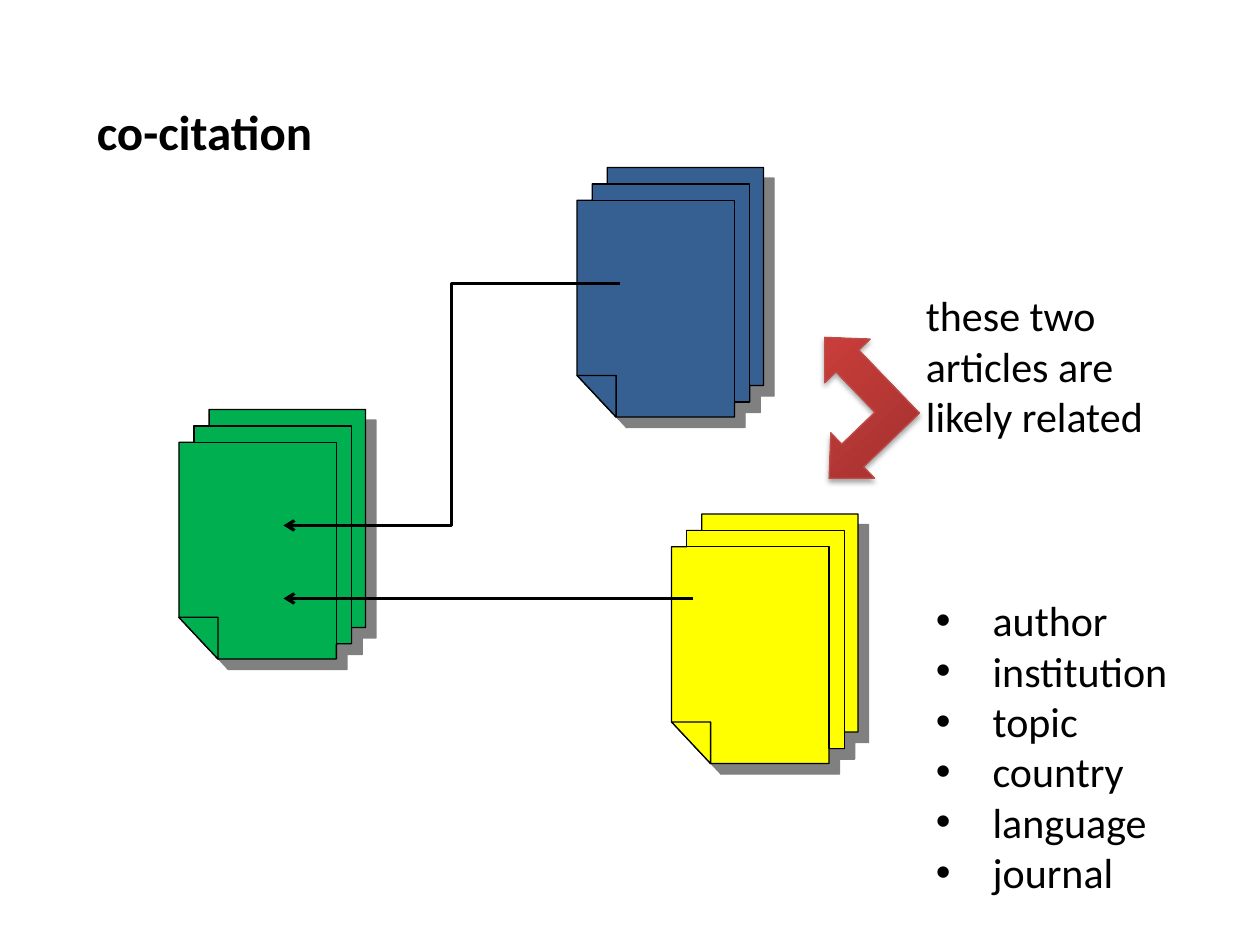
import lxml.etree
import pptx
import pptx.dml.color
import pptx.enum.shapes
import pptx.enum.text
import pptx.oxml
import pptx.oxml.ns
import pptx.util
from dataclasses import dataclass

Inches = pptx.util.Inches
Pt = pptx.util.Pt
qn = pptx.oxml.ns.qn
NS = pptx.oxml.ns.nsdecls("a")

# Outline, edges of the rear sheets and folded corner, from the stack's top left
STACK = (
    ((0, 1.65), (0, 0.26), (0.12, 0.26), (0.12, 0.13), (0.24, 0.13), (0.24, 0),
     (1.48, 0), (1.48, 1.73), (1.37, 1.73), (1.37, 1.86), (1.25, 1.86),
     (1.25, 1.98), (0.31, 1.98)),
    ((0.24, 0.13), (1.37, 0.13), (1.37, 1.86), (1.25, 1.86), (1.25, 0.26),
     (0.12, 0.26), (0.12, 0.13)),
    ((0, 1.65), (0.31, 1.65), (0.31, 1.98)),
)


@dataclass(frozen=True)
class Theme:
    font: str = "Calibri"
    head: int = 28
    body: int = 24
    ink: str = "000000"
    blue: str = "376092"
    green: str = "00B050"
    yellow: str = "FFFF00"
    gray: str = "808080"
    edge: str = "BF4C48"
    reds: tuple = ((0, "9C2F2D"), (80, "CB3E3A"), (100, "CE3B37"))


def rgb(code):
    return pptx.dml.color.RGBColor.from_string(code)


class Deck:
    def __init__(self, theme):
        self.theme = theme
        self.show = pptx.Presentation()
        self.show.slide_width = Inches(10)
        self.show.slide_height = Inches(7.5)
        self.slide = self.show.slides.add_slide(self.show.slide_layouts[6])
        self.shapes = self.slide.shapes

    def stroke(self, line, color, width):
        line.color.rgb = rgb(color)
        line.width = Pt(width)

    def shade(self, shape, color, alpha, blur, dist, angle):
        """Give the shape an outer shadow in points, percent and degrees."""
        shape.shadow.inherit = False
        effects = shape.element.spPr.find(qn("a:effectLst"))
        effects.append(pptx.oxml.parse_xml(
            f'<a:outerShdw {NS} blurRad="{Pt(blur)}" dist="{Pt(dist)}" '
            f'dir="{angle * 60000}" algn="ctr" rotWithShape="0">'
            f'<a:srgbClr val="{color}"><a:alpha val="{alpha * 1000}"/>'
            f'</a:srgbClr></a:outerShdw>'))

    def stack(self, left, top, color):
        loops = [[(Inches(left + x), Inches(top + y)) for x, y in loop]
                 for loop in STACK]
        pen = self.shapes.build_freeform(*loops[0][0])
        pen.add_line_segments(loops[0][1:])
        for loop in loops[1:]:
            pen.move_to(*loop[0])
            pen.add_line_segments(loop[1:])
        shape = pen.convert_to_shape()
        self.split(shape)
        shape.fill.solid()
        shape.fill.fore_color.rgb = rgb(color)
        self.stroke(shape.line, self.theme.ink, 0.75)
        self.shade(shape, self.theme.gray, 100, 0, 8.5, 45)

    def split(self, shape):
        """Put each loop in its own path, so that overlaps stay filled."""
        group = shape.element.find(".//" + qn("a:pathLst"))
        first = part = group[0]
        for step in list(first):
            if step.tag == qn("a:moveTo") and step is not first[0]:
                part = lxml.etree.SubElement(group, qn("a:path"), dict(first.attrib))
            if part is not first:
                part.append(step)

    def link(self, start, end):
        points = [Inches(n) for n in (*start, *end)]
        link = self.shapes.add_connector(
            pptx.enum.shapes.MSO_CONNECTOR.ELBOW, *points)
        self.stroke(link.line, self.theme.ink, 1.75)
        props = link.element.spPr
        lxml.etree.SubElement(props.find(qn("a:ln")), qn("a:tailEnd"), type="arrow")
        lxml.etree.SubElement(props, qn("a:effectLst"))

    def text(self, box, words, size, bold=False, bullet=False):
        frame = self.shapes.add_textbox(*map(Inches, box)).text_frame
        frame.word_wrap = True
        frame.auto_size = pptx.enum.text.MSO_AUTO_SIZE.SHAPE_TO_FIT_TEXT
        frame.text = words
        for para in frame.paragraphs:
            if bullet:
                props = para._p.get_or_add_pPr()
                props.set("marL", str(Inches(0.45)))
                props.set("indent", str(Inches(-0.45)))
                lxml.etree.SubElement(props, qn("a:buFont"), typeface="Arial")
                lxml.etree.SubElement(props, qn("a:buChar"), char="•")
            for run in para.runs:
                run.font.name = self.theme.font
                run.font.size = Pt(size)
                run.font.bold = bold
                run.font.color.rgb = rgb(self.theme.ink)

    def arrow(self, box, turn):
        shape = self.shapes.add_shape(
            pptx.enum.shapes.MSO_SHAPE.LEFT_UP_ARROW, *map(Inches, box))
        shape.rotation = turn
        for i, value in enumerate((0.25, 0.25, 0.26)):
            shape.adjustments[i] = value
        shape.fill.gradient()
        shape.fill.gradient_angle = 90
        stops = shape.element.spPr.find(".//" + qn("a:gsLst"))
        for stop in list(stops):
            stops.remove(stop)
        for place, color in self.theme.reds:
            stops.append(pptx.oxml.parse_xml(
                f'<a:gs {NS} pos="{place * 1000}"><a:srgbClr val="{color}"/></a:gs>'))
        self.stroke(shape.line, self.theme.edge, 0.75)
        self.shade(shape, self.theme.ink, 35, 3.1, 1.8, 90)


def main():
    theme = Theme()
    deck = Deck(theme)
    deck.stack(4.58, 1.33, theme.blue)
    deck.stack(1.42, 3.25, theme.green)
    deck.stack(5.33, 4.08, theme.yellow)
    deck.link((5.5, 4.75), (2.25, 4.75))
    deck.link((4.92, 2.25), (2.25, 4.17))
    deck.text((0.67, 0.76, 2.33, 0.57), "co-citation", theme.head, bold=True)
    shared = ("author", "institution", "topic", "country", "language", "journal")
    deck.text((7.33, 4.67, 2.5, 2.52), "\n".join(shared), theme.body, bullet=True)
    deck.text((7.25, 2.25, 2.25, 1.31),
              "these two articles are likely related", theme.body)
    deck.arrow((6.24, 2.7, 1, 1.08), 316.1)
    deck.show.save("out.pptx")


if __name__ == "__main__":
    main()
